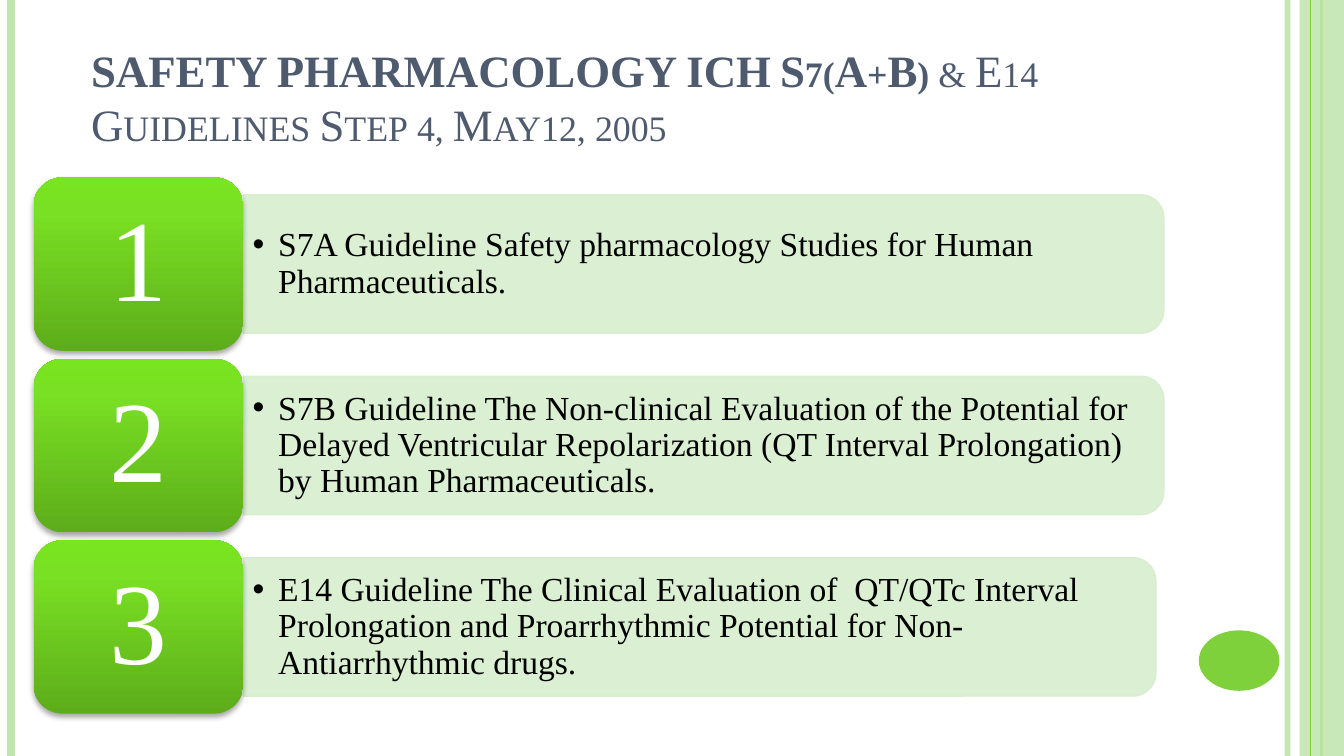
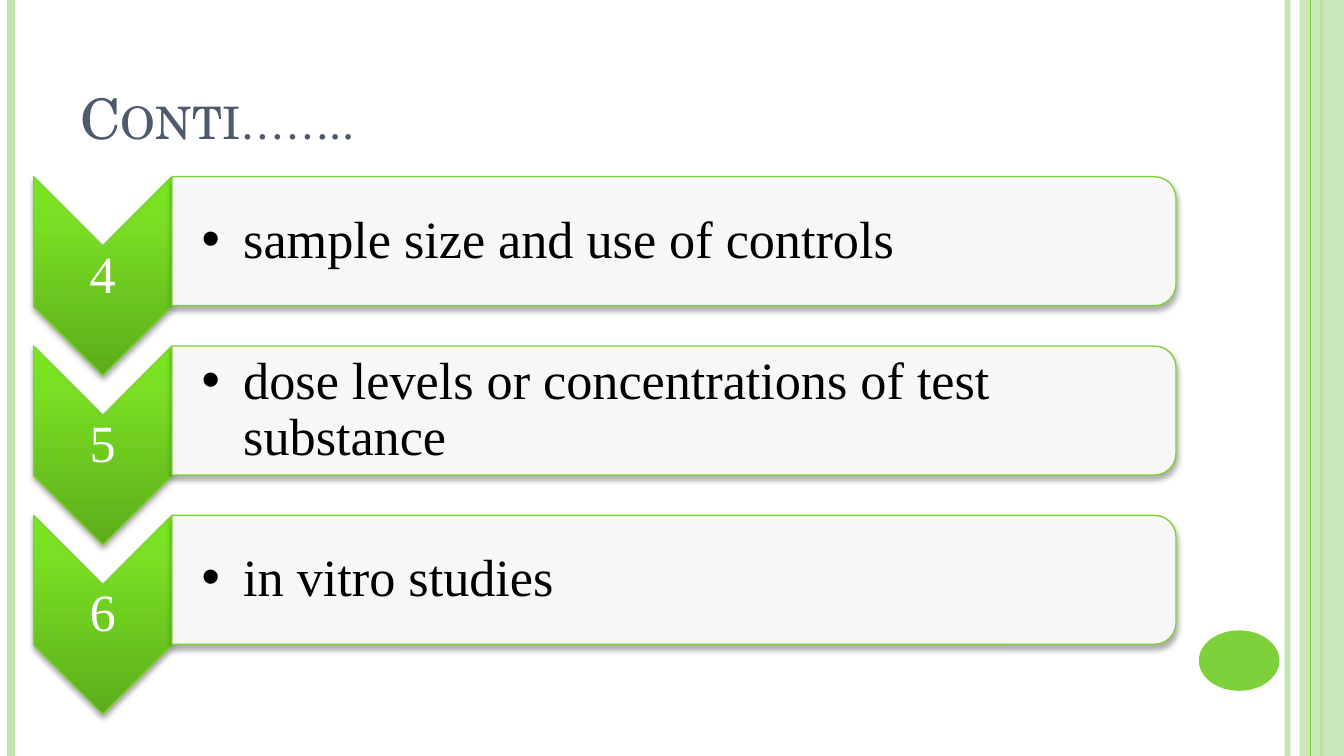
from lxml import etree
from pptx import Presentation
from pptx import util as u
from pptx.dml.color import RGBColor
from pptx.enum import shapes, text
from pptx.oxml import parse_xml
from pptx.oxml import ns

GREEN = RGBColor(0x7F, 0xD1, 0x3B)
PALE = RGBColor(0xC0, 0xE5, 0xAF)
MINT = RGBColor(0xD8, 0xEE, 0xCE)
SLATE = RGBColor(0x4E, 0x5B, 0x6F)
WHITE = RGBColor(0xFF, 0xFF, 0xFF)
BLACK = RGBColor(0, 0, 0)
GLOW = [(0, RGBColor(0x5D, 0xAD, 0x1B)),
        (80, RGBColor(0x79, 0xE0, 0x23)),
        (100, RGBColor(0x79, 0xE5, 0x20))]

TIMES = "Times New Roman"
SCHOLA = "TeX Gyre Schola"
WIDE = 10
HIGH = WIDE * 9 / 16
LEFT = 0.25

GUIDES = [
    ("1", 6.85, "S7A Guideline Safety pharmacology Studies for Human Pharmaceuticals."),
    ("2", 6.85, "S7B Guideline The Non-clinical Evaluation of the Potential for Delayed "
                "Ventricular Repolarization (QT Interval Prolongation) by Human Pharmaceuticals."),
    ("3", 6.79, "E14 Guideline The Clinical Evaluation of  QT/QTc Interval Prolongation "
                "and Proarrhythmic Potential for Non-Antiarrhythmic drugs."),
]
STEPS = [
    ("4", "sample size and use of controls"),
    ("5", "dose levels or concentrations of test substance"),
    ("6", "in vitro studies"),
]
HEADS = [
    (0.58, [("SAFETY PHARMACOLOGY ICH S7(A+B)", dict(bold=True)),
            (" & E14 Guidelines Step 4, May12, 2005", dict(bold=False))],
     dict(size=u.Pt(24), name=TIMES)),
    (0.5, [("Conti……..", {})], dict(size=u.Pt(30), name=SCHOLA)),
]
RAILS = [(9.58, PALE, 3, 93), (0.08, PALE, 4.5, 100), (9.83, GREEN, 1.5, 100)]
EDGE = (9.75, GREEN, 0.75, 100)


def fade(node, pct):
    if pct < 100:
        for color in node.iter(ns.qn("a:srgbClr")):
            etree.SubElement(color, ns.qn("a:alpha")).set("val", str(pct * 1000))


def rail(slide, x, color, width, pct):
    line = slide.shapes.add_connector(
        shapes.MSO_CONNECTOR.STRAIGHT, u.Inches(x), 0, u.Inches(x), u.Inches(HIGH))
    line.line.color.rgb = color
    line.line.width = u.Pt(width)
    prop = line._element.spPr
    fade(prop, pct)
    etree.SubElement(prop, ns.qn("a:effectLst"))


def shade(shape):
    node = shape._element.spPr.find(ns.qn("a:effectLst"))
    node.append(parse_xml(
        f'<a:outerShdw {ns.nsdecls("a")} blurRad="{u.Pt(3.1)}" dist="{u.Pt(1.8)}" '
        'dir="5400000" rotWithShape="0"><a:srgbClr val="000000">'
        '<a:alpha val="35000"/></a:srgbClr></a:outerShdw>'))


def glow(shape):
    stops = "".join(f'<a:gs pos="{at * 1000}"><a:srgbClr val="{color}"/></a:gs>'
                    for at, color in GLOW)
    geom = shape._element.spPr.find(ns.qn("a:prstGeom"))
    geom.addnext(parse_xml(
        f'<a:gradFill {ns.nsdecls("a")} rotWithShape="0"><a:gsLst>{stops}</a:gsLst>'
        '<a:lin ang="16200000" scaled="0"/></a:gradFill>'))


def block(slide, kind, box, fill=None, pct=100, line=None, turn=False, dark=False):
    x, y, w, h = box
    if turn:
        x, y, w, h = x + (w - h) / 2, y + (h - w) / 2, h, w
    shape = slide.shapes.add_shape(kind, *map(u.Inches, (x, y, w, h)))
    shape.rotation = 90 if turn else 0
    shape.shadow.inherit = False
    if fill is None:
        glow(shape)
    else:
        shape.fill.solid()
        shape.fill.fore_color.rgb = fill
        fade(shape._element.spPr.find(ns.qn("a:solidFill")), pct)
    if line is None:
        shape.line.fill.background()
    else:
        shape.line.color.rgb = line
        shape.line.width = u.Pt(0.75)
    if dark:
        shade(shape)
    return shape


def label(slide, box):
    return slide.shapes.add_textbox(*map(u.Inches, box))


def write(shape, runs, form, pads, anchor=text.MSO_ANCHOR.MIDDLE,
          align=text.PP_ALIGN.LEFT, space=0.9, hang=0, caps=False):
    frame = shape.text_frame
    frame.word_wrap = True
    frame.vertical_anchor = anchor
    for side, pad in zip(("left", "top", "right", "bottom"), pads):
        setattr(frame, "margin_" + side, u.Inches(pad))
    para = frame.paragraphs[0]
    para.alignment = align
    para.line_spacing = space
    if hang:
        prop = para._p.get_or_add_pPr()
        prop.set("marL", str(u.Inches(hang)))
        prop.set("indent", str(-u.Inches(hang)))
        etree.SubElement(prop, ns.qn("a:buFont")).set("typeface", "Arial")
        etree.SubElement(prop, ns.qn("a:buChar")).set("char", "•")
    for words, extra in runs:
        run = para.add_run()
        run.text = words
        look = {**form, **extra}
        run.font.color.rgb = look.pop("color")
        for key, val in look.items():
            setattr(run.font, key, val)
        if caps:
            run._r.get_or_add_rPr().set("cap", "small")


def start(deck, head):
    slide = deck.slides.add_slide(deck.slide_layouts[6])
    for item in RAILS:
        rail(slide, *item)
    kind = shapes.MSO_SHAPE
    block(slide, kind.RECTANGLE, (9.67, 0, 0.33, HIGH), PALE, 87)
    rail(slide, *EDGE)
    block(slide, kind.OVAL, (8.92, 4.69, 0.6, 0.45), GREEN)
    x, runs, form = head
    write(label(slide, (x, 0.23, 8.17, 0.94)), runs, dict(form, color=SLATE),
          (0.1, 0.05, 0.1, 0.05), text.MSO_ANCHOR.BOTTOM, space=1.0, caps=True)
    return slide


def panel(slide, box, words, size, pads, hang, **look):
    x, y, w, h = box
    block(slide, shapes.MSO_SHAPE.ROUND_2_SAME_RECTANGLE, box, pct=90, turn=True, **look)
    write(label(slide, (x, y + 0.05, w - 0.05, h - 0.1)), [(words, {})],
          dict(size=u.Pt(size), name=TIMES, color=BLACK), pads, hang=hang)


def number(shape, digit, size, pads):
    write(shape, [(digit, {})], dict(size=u.Pt(size), name=TIMES, color=WHITE),
          pads, align=text.PP_ALIGN.CENTER)


def guides(deck):
    slide = start(deck, HEADS[0])
    wide, high, step = 1.56, 1.29, 1.35
    tall = 1.03
    for row, (digit, span, words) in enumerate(GUIDES):
        top = 1.32 + row * step
        panel(slide, (LEFT + wide, top + (high - tall) / 2, span, tall), words, 18,
              (0.07, 0.04, 0.07, 0.04), 0.19, fill=MINT, line=MINT)
        badge = block(slide, shapes.MSO_SHAPE.ROUNDED_RECTANGLE,
                      (LEFT, top, wide, high), dark=True)
        number(badge, digit, 62, (0.26, 0.13, 0.26, 0.13))


def steps(deck):
    slide = start(deck, HEADS[1])
    wide, high, step = 1.03, 1.48, 1.26
    pads = (0.02,) * 4
    for row, (digit, words) in enumerate(STEPS):
        top = 1.315 + row * step
        block(slide, shapes.MSO_SHAPE.CHEVRON, (LEFT, top, wide, high),
              line=GREEN, turn=True, dark=True)
        number(label(slide, (LEFT, top + wide / 2, wide, high - wide)), digit, 28, pads)
        panel(slide, (LEFT + wide, top, 7.47, 0.96), words, 28,
              (0.22, 0.02, 0.02, 0.02), 0.31, fill=WHITE, line=GREEN, dark=True)


def main():
    deck = Presentation()
    deck.slide_width, deck.slide_height = u.Inches(WIDE), u.Inches(HIGH)
    guides(deck)
    steps(deck)
    deck.save("out.pptx")


if __name__ == "__main__":
    main()
